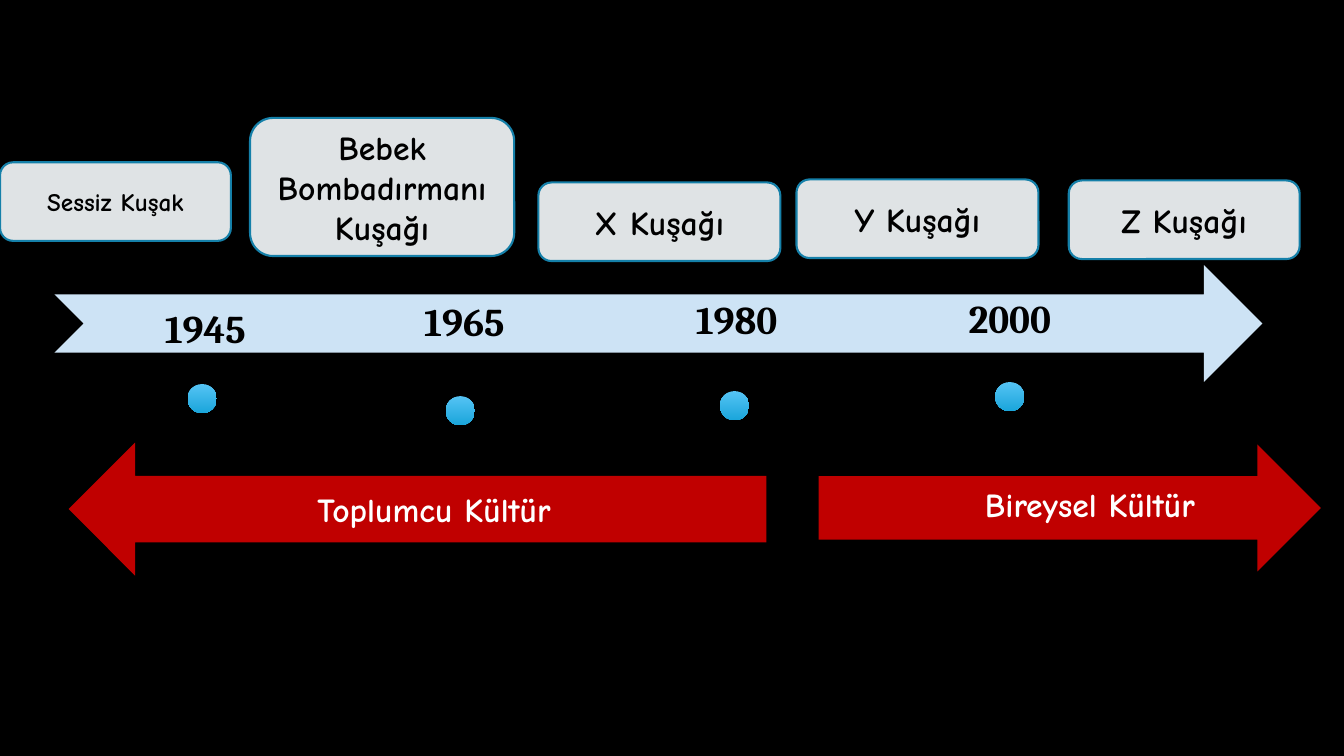
from pptx import Presentation
from pptx.dml.color import RGBColor
from pptx.enum.shapes import MSO_SHAPE
from pptx.enum.text import MSO_ANCHOR, PP_ALIGN
from pptx.util import Inches, Pt


def rgb(value):
    return RGBColor.from_string(value)


class TimelineSlide:
    """Draws timeline elements on a grid of 0.1 inch columns and rows."""

    CELL = 0.1
    BLACK, WHITE = "000000", "FFFFFF"
    BAND, CARD, EDGE, RED = "CDE3F5", "DFE3E5", "1580A9", "C00000"
    DOT = ("55C3F4", "1BA6DB")
    LABEL_FONT, YEAR_FONT = "Comic Neue", "Cambria"

    def __init__(self, prs):
        self.s = prs.slides.add_slide(prs.slide_layouts[6])
        fill = self.s.background.fill
        fill.solid()
        fill.fore_color.rgb = rgb(self.BLACK)

    def box(self, *cells):
        return [Inches(n * self.CELL) for n in cells]

    def shape(self, kind, x, y, w, h):
        sp = self.s.shapes.add_shape(kind, *self.box(x, y, w, h))
        sp.shadow.inherit = False
        sp.line.fill.background()
        return sp

    def label(self, sp, text, size, color, font=LABEL_FONT,
              align=PP_ALIGN.CENTER, anchor=MSO_ANCHOR.MIDDLE):
        tf = sp.text_frame
        tf.word_wrap = True
        tf.vertical_anchor = anchor
        p = tf.paragraphs[0]
        p.text = text
        p.alignment = align
        p.font.name, p.font.size, p.font.bold = font, Pt(size), True
        p.font.color.rgb = rgb(color)
        return tf

    def arrow(self, kind, x, y, w, h, color, text=""):
        sp = self.shape(kind, x, y, w, h)
        sp.fill.solid()
        sp.fill.fore_color.rgb = rgb(color)
        if text:
            self.label(sp, text, 24, self.WHITE)

    def card(self, text, x, y, w, h=7.8, size=24):
        sp = self.shape(MSO_SHAPE.ROUNDED_RECTANGLE, x, y, w, h)
        sp.fill.solid()
        sp.fill.fore_color.rgb = rgb(self.CARD)
        sp.line.color.rgb = rgb(self.EDGE)
        sp.line.width = Pt(1.5)
        self.label(sp, text, size, self.BLACK)

    def year(self, text, x, y, h, anchor):
        sp = self.s.shapes.add_textbox(*self.box(x, y, 25.9, h))
        tf = self.label(sp, text, 28, self.BLACK, self.YEAR_FONT, anchor=anchor)
        tf.margin_left = tf.margin_right = Inches(0.22)
        tf.margin_top = tf.margin_bottom = Inches(0.22)
        tf.paragraphs[0].line_spacing = 0.9

    def dot(self, x, y):
        sp = self.shape(MSO_SHAPE.OVAL, x, y, 2.9, 2.9)
        sp.fill.gradient()
        sp.fill.gradient_angle = 270
        for stop, color in zip(sp.fill.gradient_stops, self.DOT):
            stop.color.rgb = rgb(color)

    def caption(self, text, x, y, w, h):
        sp = self.s.shapes.add_textbox(*self.box(x, y, w, h))
        self.label(sp, text, 24, self.WHITE, align=PP_ALIGN.RIGHT,
                   anchor=MSO_ANCHOR.TOP)


def main():
    prs = Presentation()
    prs.slide_width, prs.slide_height = Inches(13.33), Inches(7.5)
    slide = TimelineSlide(prs)

    slide.arrow(MSO_SHAPE.NOTCHED_RIGHT_ARROW, 5.4, 26.3, 119.8, 11.6, slide.BAND)
    top, bottom = MSO_ANCHOR.TOP, MSO_ANCHOR.BOTTOM
    for text, x, y, h, anchor, dot_x, dot_y in [
        ("1945", 7.4, 30.2, 6.8, bottom, 18.6, 38.1),
        ("1965", 33.1, 27.9, 11.6, top, 44.2, 39.3),
        ("1980", 60.1, 26.7, 9.4, bottom, 71.4, 38.8),
        ("2000", 87.2, 27.6, 17.5, top, 98.7, 37.9),
    ]:
        slide.year(text, x, y, h, anchor)
        slide.dot(dot_x, dot_y)

    slide.card("Sessiz Kuşak", 0, 16.1, 22.9, size=18)
    slide.card("Bebek Bombadırmanı Kuşağı", 24.8, 11.7, 26.2, 13.7)
    slide.card("X Kuşağı", 53.4, 18.1, 24)
    slide.card("Y Kuşağı", 79, 17.8, 24)
    slide.card("Z Kuşağı", 106, 17.9, 22.9)

    slide.arrow(MSO_SHAPE.LEFT_ARROW, 6.8, 43.9, 69.2, 13.2, slide.RED,
                "Toplumcu Kültür")
    slide.arrow(MSO_SHAPE.RIGHT_ARROW, 81.2, 44.1, 49.8, 12.6, slide.RED)
    slide.caption("Bireysel Kültür", 93.9, 47.5, 25.6, 8.1)

    prs.save("out.pptx")


if __name__ == "__main__":
    main()
